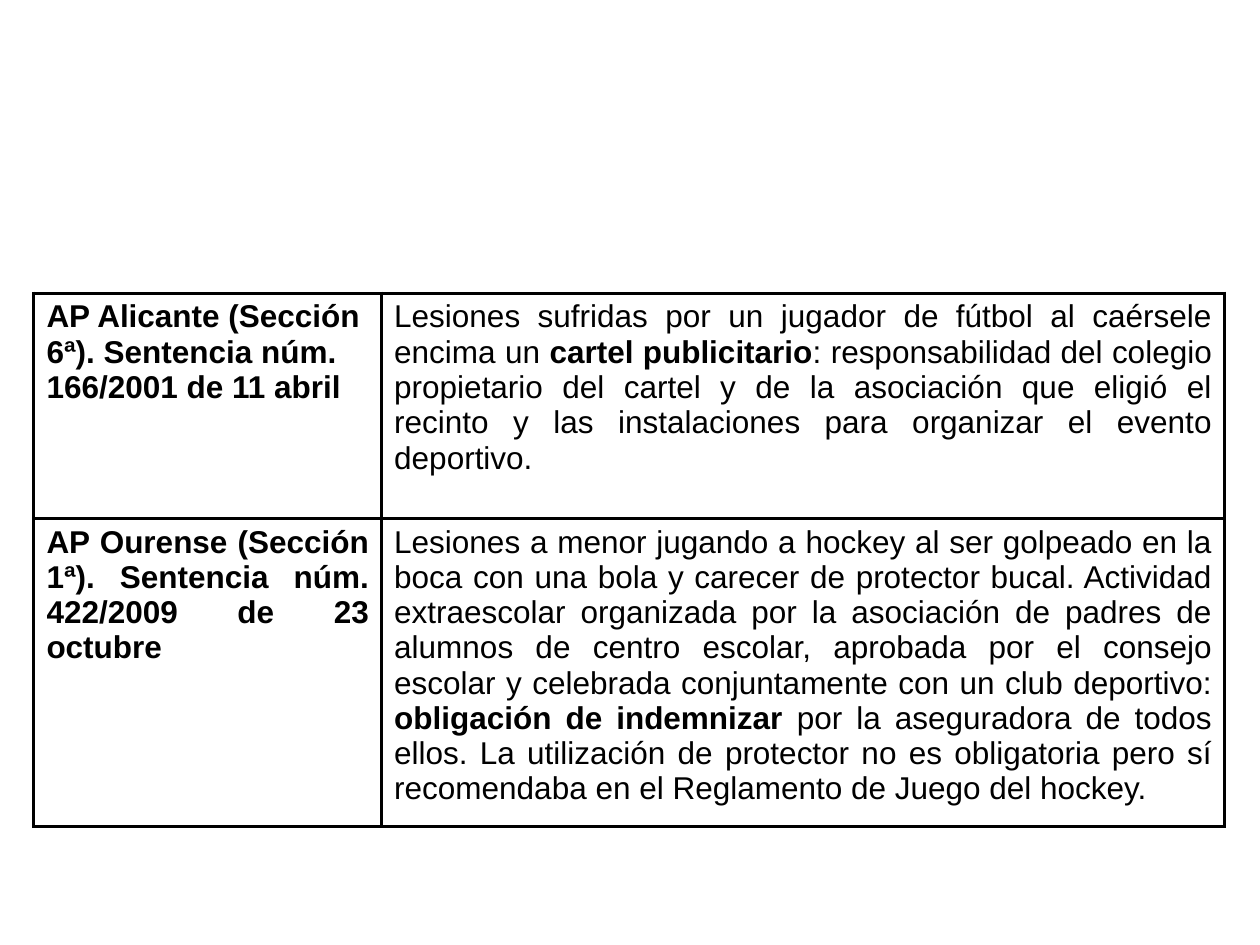
"""Build a slide with a table of court rulings on sports injuries."""
from pptx import Presentation
from pptx.dml.color import RGBColor
from pptx.enum.text import PP_ALIGN as Align
from pptx.oxml import parse_xml
from pptx.oxml.ns import nsdecls
from pptx.util import Pt

INK = "000000"
EDGE = 2
LEFT, TOP = 19.4, 167.5
COLS = (198.7, 481.7)
ROWS = (128.6, 176.2)
RULINGS = [
    [
        (Align.LEFT, [("AP Alicante (Sección 6ª). Sentencia núm. 166/2001 de 11 abril", True)]),
        (Align.JUSTIFY, [
            ("Lesiones sufridas por un jugador de fútbol al caérsele encima un ", False),
            ("cartel publicitario", True),
            (": responsabilidad del colegio propietario del cartel y de la asociación "
             "que eligió el recinto y las instalaciones para organizar el evento deportivo.", False),
        ]),
    ],
    [
        (Align.JUSTIFY, [("AP Ourense (Sección 1ª). Sentencia núm. 422/2009 de 23 octubre", True)]),
        (Align.JUSTIFY, [
            ("Lesiones a menor jugando a hockey al ser golpeado en la boca con una bola "
             "y carecer de protector bucal. Actividad extraescolar organizada por la "
             "asociación de padres de alumnos de centro escolar, aprobada por el consejo "
             "escolar y celebrada conjuntamente con un club deportivo: ", False),
            ("obligación de indemnizar ", True),
            ("por la aseguradora de todos ellos. La utilización de protector no es obligatoria "
             "pero sí recomendaba en el Reglamento de Juego del hockey.", False),
        ]),
    ],
]


def color(code):
    return RGBColor.from_string(code)


def write(para, text, bold=False, size=18, face="Arial", ink=INK):
    run = para.add_run()
    run.text = text
    font = run.font
    font.name, font.size, font.bold = face, Pt(size), bold
    font.color.rgb = color(ink)


def border(cell):
    props = cell._tc.get_or_add_tcPr()
    for spot, side in enumerate(("lnL", "lnR", "lnT", "lnB")):
        props.insert(spot, parse_xml(
            f'<a:{side} {nsdecls("a")} w="{Pt(EDGE)}"><a:solidFill>'
            f'<a:srgbClr val="{INK}"/></a:solidFill></a:{side}>'))


def main():
    deck = Presentation()
    deck.slide_width, deck.slide_height = Pt(720), Pt(540)
    slide = deck.slides.add_slide(deck.slide_layouts[6])
    frame = slide.shapes.add_table(len(ROWS), len(COLS), Pt(LEFT), Pt(TOP),
                                   Pt(sum(COLS)), Pt(sum(ROWS)))
    table = frame.table
    table.first_row = table.horz_banding = False
    for col, width in zip(table.columns, COLS):
        col.width = Pt(width)
    for row, height, ruling in zip(table.rows, ROWS, RULINGS):
        row.height = Pt(height)
        for cell, (align, runs) in zip(row.cells, ruling):
            cell.fill.background()
            border(cell)
            para = cell.text_frame.paragraphs[0]
            para.alignment = align
            for text, bold in runs:
                write(para, text, bold=bold)
    deck.save("out.pptx")


if __name__ == "__main__":
    main()
